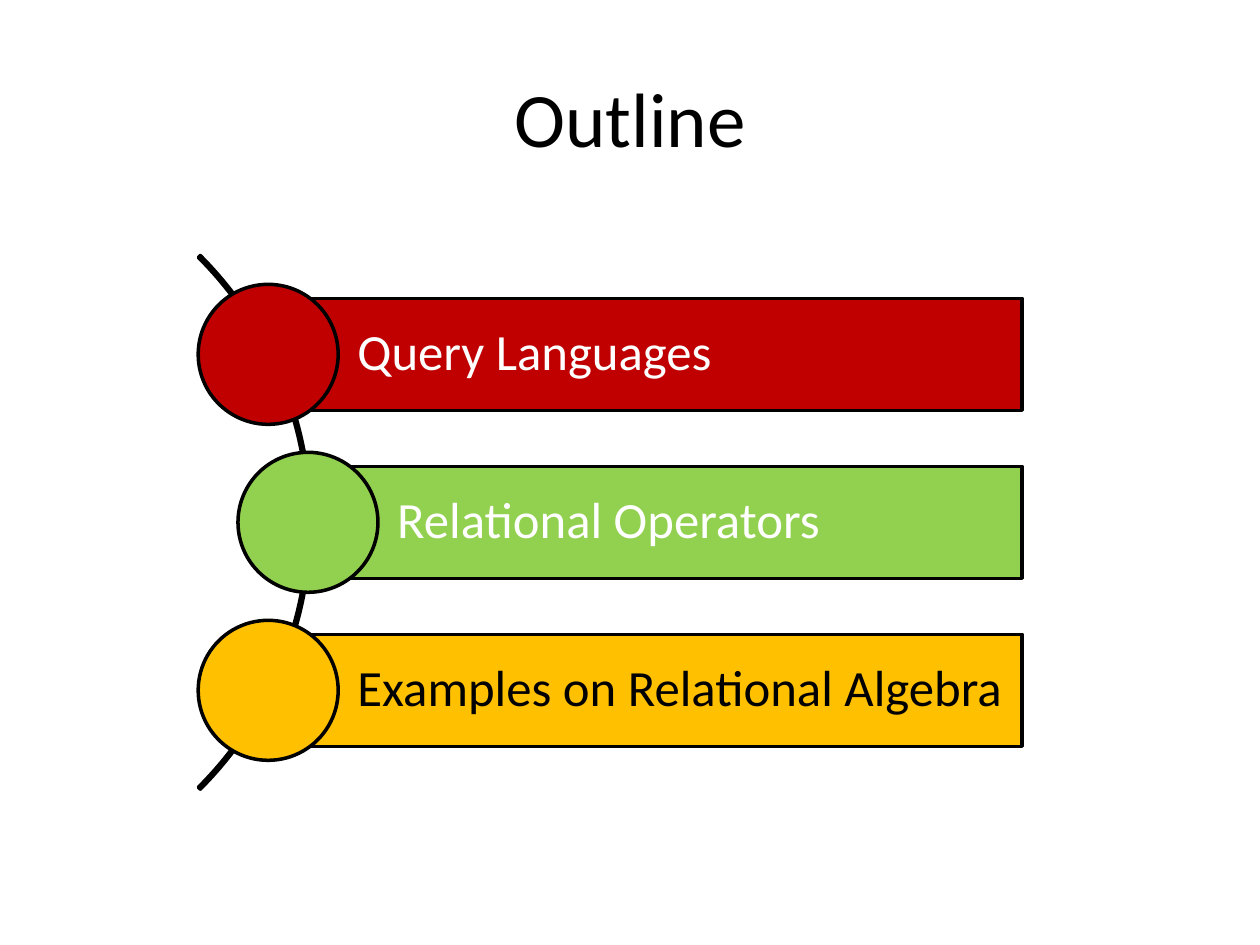
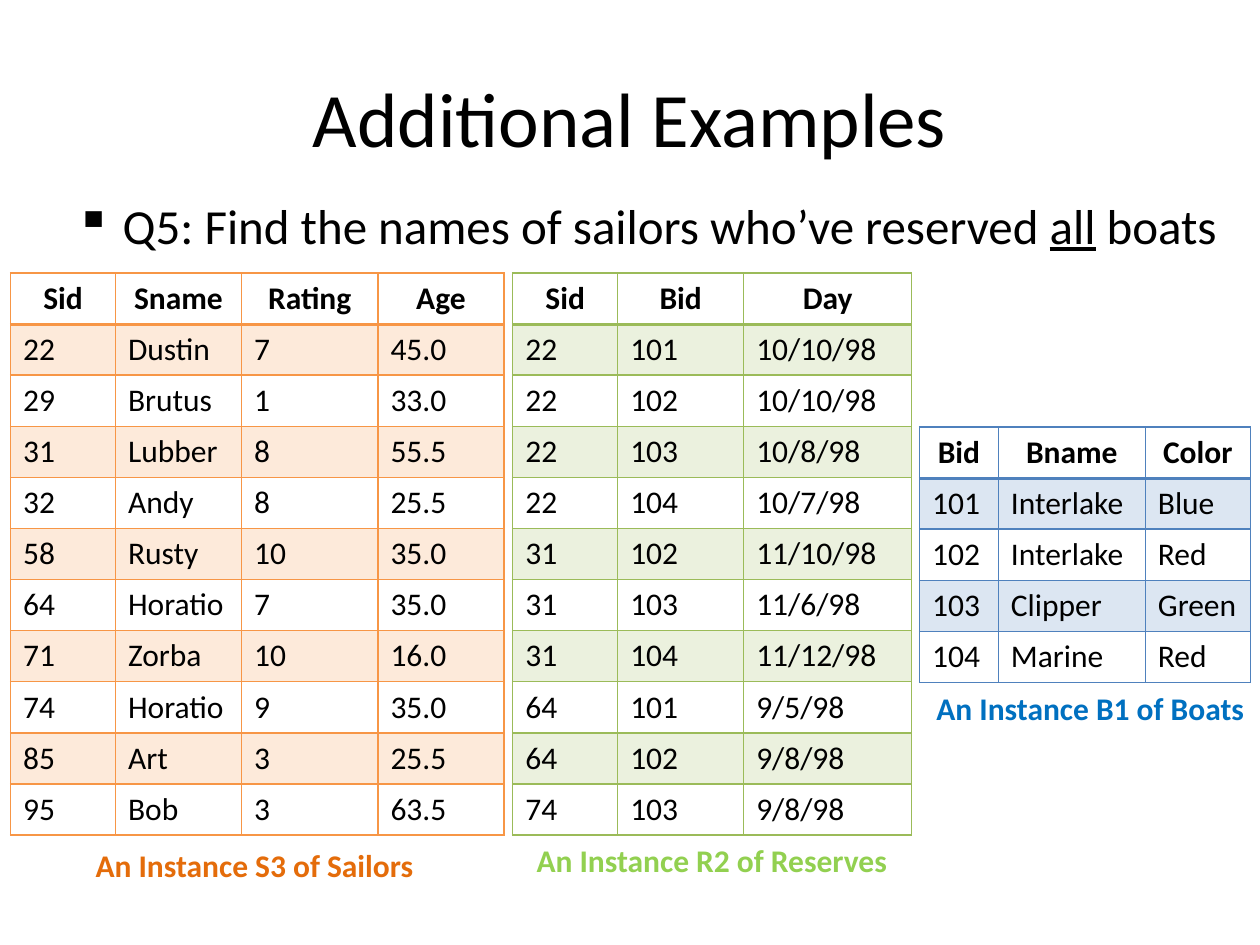
from dataclasses import dataclass
from math import sqrt

from pptx import Presentation
from pptx.dml.color import RGBColor
from pptx.enum import shapes, text
from pptx.oxml import parse_xml
from pptx.oxml.ns import nsdecls
from pptx.util import Pt


@dataclass(frozen=True)
class Theme:
    font: str = "Calibri"
    ink: str = "000000"
    paper: str = "FFFFFF"
    red: str = "C00000"
    lime: str = "92D050"
    amber: str = "FFC000"
    orange_grid: str = "F79646"
    green_grid: str = "9BBB59"
    blue_grid: str = "4F81BD"
    orange_text: str = "E46C0A"
    blue_text: str = "0070C0"
    title_size: int = 44
    topic_size: int = 29
    question_size: int = 28
    table_size: int = 18


@dataclass(frozen=True)
class Box:
    left: float
    top: float
    width: float
    height: float

    def lengths(self):
        return [Pt(side) for side in (self.left, self.top, self.width, self.height)]


THEME = Theme()
TITLE_BOX = Box(36, 21.6, 648, 90)
OUTLINE_BOX = Box(112, 144, 472, 309)
QUESTION_BOX = Box(36, 108, 674, 432)
ROW_HEIGHT = 29.2

TOPICS = [
    ("Query Languages", THEME.red, THEME.paper),
    ("Relational Operators", THEME.lime, THEME.paper),
    ("Examples on Relational Algebra", THEME.amber, THEME.ink),
]

SAILORS = """Sid Sname Rating Age
22 Dustin 7 45.0
29 Brutus 1 33.0
31 Lubber 8 55.5
32 Andy 8 25.5
58 Rusty 10 35.0
64 Horatio 7 35.0
71 Zorba 10 16.0
74 Horatio 9 35.0
85 Art 3 25.5
95 Bob 3 63.5"""

RESERVES = """Sid Bid Day
22 101 10/10/98
22 102 10/10/98
22 103 10/8/98
22 104 10/7/98
31 102 11/10/98
31 103 11/6/98
31 104 11/12/98
64 101 9/5/98
64 102 9/8/98
74 103 9/8/98"""

BOATS = """Bid Bname Color
101 Interlake Blue
102 Interlake Red
103 Clipper Green
104 Marine Red"""


@dataclass(frozen=True)
class Relation:
    records: str
    left: float
    top: float
    columns: tuple
    grid_color: str
    caption: str
    caption_color: str
    caption_box: Box


RELATIONS = [
    Relation(SAILORS, 6, 156, (60, 72, 78, 72), THEME.orange_grid,
             "An Instance S3 of Sailors", THEME.orange_text, Box(41.5, 324, 198, 29)),
    Relation(RESERVES, 293, 156, (60, 72, 96), THEME.green_grid,
             "An Instance R2 of Reserves", THEME.lime, Box(6.5, 321, 217, 29)),
    Relation(BOATS, 525.5, 244, (45, 84, 60), THEME.blue_grid,
             "An Instance B1 of Boats", THEME.blue_text, Box(2.5, 146, 192, 29)),
]


def rgb(color):
    return RGBColor.from_string(color)


def style(paragraph, size, color=THEME.ink, bold=False):
    paragraph.font.name = THEME.font
    paragraph.font.size = Pt(size)
    paragraph.font.bold = bold
    paragraph.font.color.rgb = rgb(color)


def titled_slide(deck, heading):
    slide = deck.slides.add_slide(deck.slide_layouts[5])
    title = slide.shapes.title
    title.left, title.top, title.width, title.height = TITLE_BOX.lengths()
    title.text_frame.text = heading
    title.text_frame.vertical_anchor = text.MSO_ANCHOR.MIDDLE
    paragraph = title.text_frame.paragraphs[0]
    paragraph.alignment = text.PP_ALIGN.CENTER
    style(paragraph, THEME.title_size)
    return slide


def outlined(slide, kind, box, fill=None):
    shape = slide.shapes.add_shape(kind, *box.lengths())
    shape.shadow.inherit = False
    shape.line.color.rgb = rgb(THEME.ink)
    shape.line.width = Pt(2)
    if fill:
        shape.fill.solid()
        shape.fill.fore_color.rgb = rgb(fill)
    else:
        shape.fill.background()
    return shape


def draw_outline(slide, box, topics):
    node, bar_height, pitch = 80, 64, 96
    hub_x, hub_y = box.left - 150, box.top + box.height / 2
    orbit, arc_radius = 214, 215.6
    arc = outlined(slide, shapes.MSO_SHAPE.BLOCK_ARC,
                   Box(hub_x - arc_radius, hub_y - arc_radius, 2 * arc_radius, 2 * arc_radius))
    for index, setting in enumerate((189, 27, 0.0036)):
        arc.adjustments[index] = setting

    for index, (topic, fill, ink) in enumerate(topics):
        rise = (index - (len(topics) - 1) / 2) * pitch
        x, y = hub_x + sqrt(orbit ** 2 - rise ** 2), hub_y + rise
        bar = outlined(slide, shapes.MSO_SHAPE.RECTANGLE,
                       Box(x, y - bar_height / 2, box.left + box.width - x, bar_height), fill)
        frame = bar.text_frame
        frame.word_wrap = True
        frame.vertical_anchor = text.MSO_ANCHOR.MIDDLE
        frame.margin_left = Pt(51)
        frame.margin_right = frame.margin_top = frame.margin_bottom = Pt(5.8)
        frame.text = topic
        paragraph = frame.paragraphs[0]
        paragraph.alignment = text.PP_ALIGN.LEFT
        paragraph.line_spacing = 0.9
        style(paragraph, THEME.topic_size, ink)
        outlined(slide, shapes.MSO_SHAPE.OVAL, Box(x - node / 2, y - node / 2, node, node), fill)


def draw_question(slide, box):
    frame = slide.shapes.add_textbox(*box.lengths()).text_frame
    frame.word_wrap = True
    paragraph = frame.paragraphs[0]
    paragraph.space_before = Pt(5.6)
    style(paragraph, THEME.question_size)
    for words in ("Q5: Find the names of sailors who’ve reserved ", "all", " boats"):
        run = paragraph.add_run()
        run.text = words
        if words == "all":
            run.font.underline = True
    properties = paragraph._p.get_or_add_pPr()
    properties.set("marL", str(Pt(27)))
    properties.set("indent", str(-Pt(27)))
    bullet = parse_xml(f'<a:buChar {nsdecls("a")} char="▪"/>')
    properties.insert_element_before(bullet, "a:tabLst", "a:defRPr", "a:extLst")


def set_borders(cell, color, widths):
    properties = cell._tc.get_or_add_tcPr()
    for index, (side, width) in enumerate(zip("LRTB", widths)):
        properties.insert(index, parse_xml(
            f'<a:ln{side} {nsdecls("a")} w="{Pt(width)}"><a:solidFill>'
            f'<a:srgbClr val="{color}"/></a:solidFill></a:ln{side}>'))


def draw_relation(slide, relation):
    records = [line.split() for line in relation.records.splitlines()]
    box = Box(relation.left, relation.top, sum(relation.columns), ROW_HEIGHT * len(records))
    table = slide.shapes.add_table(len(records), len(relation.columns), *box.lengths()).table
    for column, width in zip(table.columns, relation.columns):
        column.width = Pt(width)
    for row_index, record in enumerate(records):
        table.rows[row_index].height = Pt(ROW_HEIGHT)
        header = row_index == 0
        for column_index, value in enumerate(record):
            cell = table.cell(row_index, column_index)
            cell.text = value
            paragraph = cell.text_frame.paragraphs[0]
            paragraph.alignment = text.PP_ALIGN.CENTER if header else text.PP_ALIGN.LEFT
            style(paragraph, THEME.table_size, bold=header)
            if row_index % 2:
                cell.fill.solid()
                cell.fill.fore_color.rgb = rgb(relation.grid_color)
                cell.fill.fore_color.brightness = 0.8
            else:
                cell.fill.background()
            set_borders(cell, relation.grid_color,
                        (1, 1, 2 if row_index == 1 else 1, 2 if header else 1))

    offset = relation.caption_box
    place = Box(box.left + offset.left, box.top + offset.top, offset.width, offset.height)
    frame = slide.shapes.add_textbox(*place.lengths()).text_frame
    frame.word_wrap = False
    frame.text = relation.caption
    style(frame.paragraphs[0], THEME.table_size, relation.caption_color, bold=True)


def main():
    deck = Presentation()
    deck.slide_width, deck.slide_height = Pt(720), Pt(540)
    draw_outline(titled_slide(deck, "Outline"), OUTLINE_BOX, TOPICS)
    examples = titled_slide(deck, "Additional Examples")
    draw_question(examples, QUESTION_BOX)
    for relation in RELATIONS:
        draw_relation(examples, relation)
    deck.save("out.pptx")


if __name__ == "__main__":
    main()
